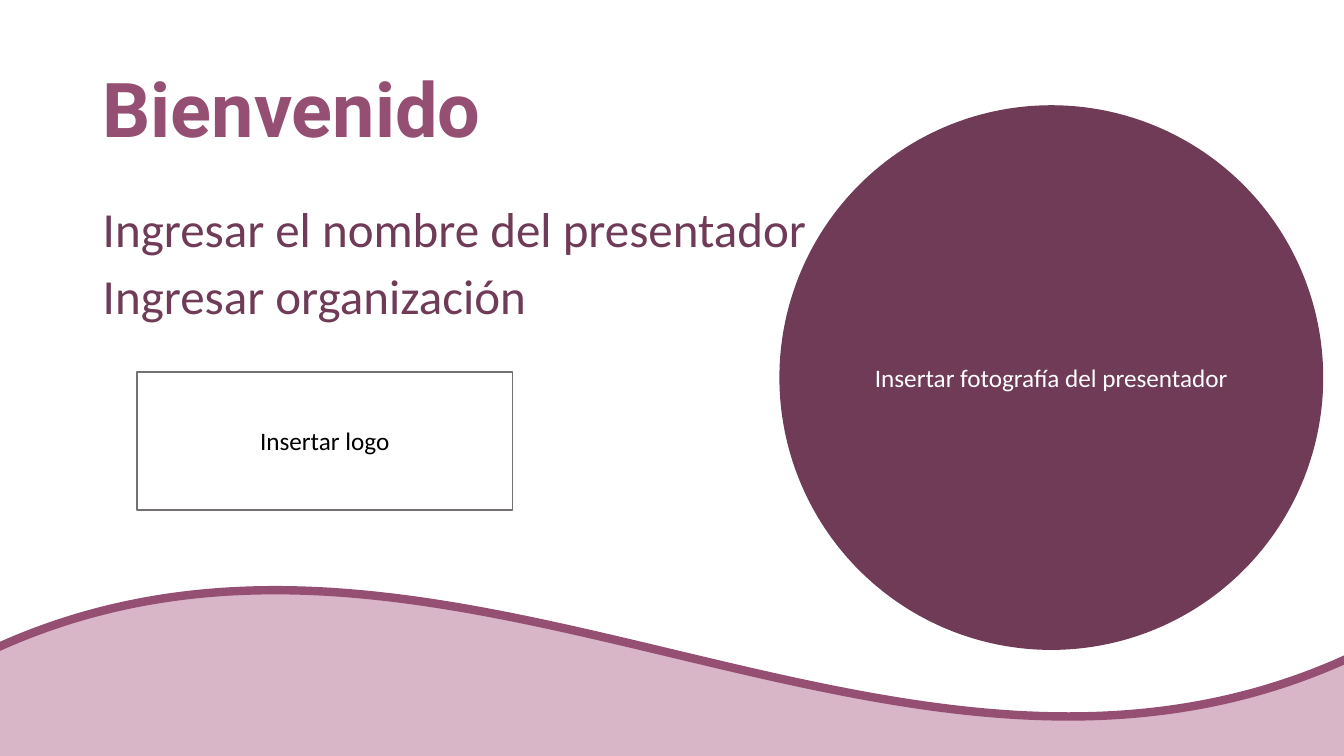
from dataclasses import dataclass

from pptx import Presentation
from pptx.dml.color import RGBColor
from pptx.enum.shapes import MSO_SHAPE as Preset
from pptx.enum.text import MSO_ANCHOR as Anchor, PP_ALIGN as Align
from pptx.util import Cm, Pt


@dataclass(frozen=True)
class Theme:
    background: str = "FFFFFF"
    accent: str = "954F72"
    dark: str = "703B56"
    pale: str = "D8B5C7"
    frame: str = "767171"
    ink: str = "000000"
    heading_font: str = "Roboto"
    body_font: str = "Calibri"
    heading_size: int = 54
    body_size: int = 35
    label_size: int = 18


THEME = Theme()


@dataclass(frozen=True)
class Box:
    """A region of the slide, in centimetres."""
    left: float
    top: float
    width: float
    height: float

    def lengths(self):
        return [Cm(n) for n in (self.left, self.top, self.width, self.height)]


def rgb(colour):
    return RGBColor.from_string(colour)


def add_run(paragraph, text, font, size, colour, bold=False):
    run = paragraph.add_run()
    run.text = text
    run.font.name = font
    run.font.size = Pt(size)
    run.font.bold = bold
    run.font.color.rgb = rgb(colour)


def add_text_frame(slide, box, anchor):
    frame = slide.shapes.add_textbox(*box.lengths()).text_frame
    frame.word_wrap = True
    frame.vertical_anchor = anchor
    return frame


def add_figure(slide, preset, box, fill, line, line_width=1):
    figure = slide.shapes.add_shape(preset, *box.lengths())
    figure.shadow.inherit = False
    figure.fill.solid()
    figure.fill.fore_color.rgb = rgb(fill)
    figure.line.color.rgb = rgb(line)
    figure.line.width = Pt(line_width)
    return figure


def add_heading(slide, box, text):
    paragraph = add_text_frame(slide, box, Anchor.MIDDLE).paragraphs[0]
    paragraph.line_spacing = 0.9
    add_run(paragraph, text, THEME.heading_font, THEME.heading_size, THEME.accent, bold=True)


def add_presenter_details(slide, box, lines):
    frame = add_text_frame(slide, box, Anchor.TOP)
    for index, line in enumerate(lines):
        paragraph = frame.add_paragraph() if index else frame.paragraphs[0]
        paragraph.line_spacing = 0.9
        if index:
            paragraph.space_before = Pt(10)
        add_run(paragraph, line, THEME.body_font, THEME.body_size, THEME.dark)


def add_insert_area(slide, preset, box, label, fill, line, ink):
    """Mark where the presenter's own material goes, with a centred label."""
    area = add_figure(slide, preset, box, fill, line)
    area.text_frame.word_wrap = True
    area.text_frame.vertical_anchor = Anchor.MIDDLE
    paragraph = area.text_frame.paragraphs[0]
    paragraph.alignment = Align.CENTER
    add_run(paragraph, label, THEME.body_font, THEME.label_size, ink)


def add_welcome_slide(deck, box):
    slide = deck.slides.add_slide(deck.slide_layouts[6])
    slide.background.fill.solid()
    slide.background.fill.fore_color.rgb = rgb(THEME.background)

    def inside(left, top, width, height):
        return Box(box.left + left, box.top + top, width, height)

    wave = inside(-0.38, 14.81, 34.62, 13.23)
    add_figure(slide, Preset.WAVE, wave, THEME.pale, THEME.accent, line_width=6)
    add_heading(slide, inside(2.34, 1.02, 29.21, 3.68), "Bienvenido")
    add_presenter_details(slide, inside(2.34, 5.05, 29.21, 12.09),
                          ["Ingresar el nombre del presentador", "Ingresar organización"])
    add_insert_area(slide, Preset.OVAL, inside(19.66, 2.67, 13.67, 13.69),
                    "Insertar fotografía del presentador",
                    THEME.dark, THEME.dark, THEME.background)
    add_insert_area(slide, Preset.RECTANGLE, inside(3.45, 9.37, 9.47, 3.48),
                    "Insertar logo", THEME.background, THEME.frame, THEME.ink)


def main():
    page = Box(0, 0, 33.87, 19.05)
    deck = Presentation()
    deck.slide_width, deck.slide_height = Cm(page.width), Cm(page.height)
    add_welcome_slide(deck, page)
    deck.save("out.pptx")


if __name__ == "__main__":
    main()
